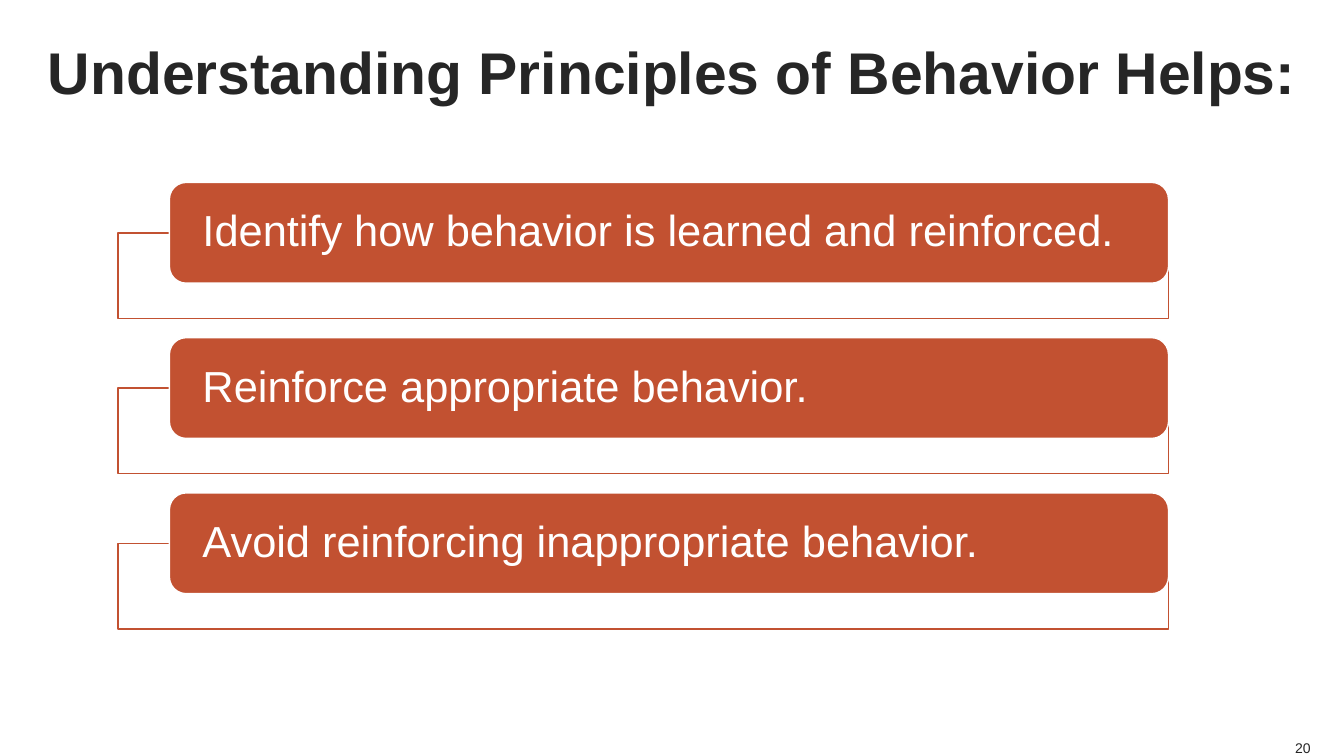
from lxml import etree
from pptx import Presentation
from pptx.dml.color import RGBColor
from pptx.enum.shapes import MSO_SHAPE
from pptx.enum.text import MSO_ANCHOR, MSO_AUTO_SIZE, PP_ALIGN
from pptx.oxml.ns import qn
from pptx.util import Inches, Pt

RECTANGLE, ROUNDED = MSO_SHAPE.RECTANGLE, MSO_SHAPE.ROUNDED_RECTANGLE
MIDDLE, BOTTOM = MSO_ANCHOR.MIDDLE, MSO_ANCHOR.BOTTOM
LEFT, CENTER, RIGHT = PP_ALIGN.LEFT, PP_ALIGN.CENTER, PP_ALIGN.RIGHT

# Content
TITLE = "Understanding Principles of Behavior Helps:"
PRINCIPLES = [
    "Identify how behavior is learned and reinforced.",
    "Reinforce appropriate behavior.",
    "Avoid reinforcing inappropriate behavior.",
]
PAGE_NUMBER = "20"

# Colours and layout, in inches
DARK, RUST, WHITE = "262626", "C25131", "FFFFFF"
FIRST_TOP, STEP = 1.81, 1.54
BAR_LEFT, BAR_WIDTH, BAR_HEIGHT = 1.68, 9.91, 1
FRAME_LEFT, FRAME_WIDTH, FRAME_HEIGHT = 1.17, 10.42, 0.85
FRAME_DROP = 0.5


def color(hex_value):
    return RGBColor.from_string(hex_value)


def write(shape, text, font, align, anchor, side_inset=0, wrap=True):
    frame = shape.text_frame
    layout = {
        "word_wrap": wrap,
        "vertical_anchor": anchor,
        "margin_left": Inches(side_inset),
        "margin_right": Inches(side_inset),
        "margin_top": 0,
        "margin_bottom": 0,
    }
    for name, value in layout.items():
        setattr(frame, name, value)
    para = frame.paragraphs[0]
    para.alignment = align
    span = para.add_run()
    span.text = text
    span.font.name = "Arial"
    span.font.color.rgb = color(font["color"])
    span.font.size = Pt(font["size"])
    span.font.bold = font.get("bold", False)
    return frame


def add_panel(page, kind, place, fill, line):
    panel = page.shapes.add_shape(kind, *map(Inches, place))
    panel.shadow.inherit = False
    panel.fill.solid()
    panel.fill.fore_color.rgb = color(fill)
    panel.line.color.rgb = color(line)
    panel.line.width = Pt(1)
    return panel


def main():
    deck = Presentation()
    deck.slide_width, deck.slide_height = Inches(13.33), Inches(7.5)
    page = deck.slides.add_slide(deck.slide_layouts[6])

    # Title
    title = page.shapes.add_textbox(*map(Inches, (0.22, 0, 12.89, 1.4)))
    write(title, TITLE, {"size": 42, "color": DARK, "bold": True}, CENTER, MIDDLE)

    # One outlined frame behind one solid bar per principle
    for index, principle in enumerate(PRINCIPLES):
        top = FIRST_TOP + index * STEP
        frame_place = (FRAME_LEFT, top + FRAME_DROP, FRAME_WIDTH, FRAME_HEIGHT)
        backing = add_panel(page, RECTANGLE, frame_place, WHITE, RUST)
        fill_color = backing.fill._xPr.find(qn("a:solidFill"))[0]
        etree.SubElement(fill_color, qn("a:alpha")).set("val", "90000")

        bar_place = (BAR_LEFT, top, BAR_WIDTH, BAR_HEIGHT)
        bar = add_panel(page, ROUNDED, bar_place, RUST, WHITE)
        text = write(bar, principle, {"size": 31, "color": WHITE}, LEFT, MIDDLE, 0.28)
        text.paragraphs[0].line_spacing = 0.9

    # Page number
    number = page.shapes.add_textbox(*map(Inches, (12.83, 7.33, 0.17, 0.17)))
    text = write(number, PAGE_NUMBER, {"size": 10, "color": DARK}, RIGHT, BOTTOM, wrap=False)
    text.auto_size = MSO_AUTO_SIZE.SHAPE_TO_FIT_TEXT

    deck.save("out.pptx")


if __name__ == "__main__":
    main()
